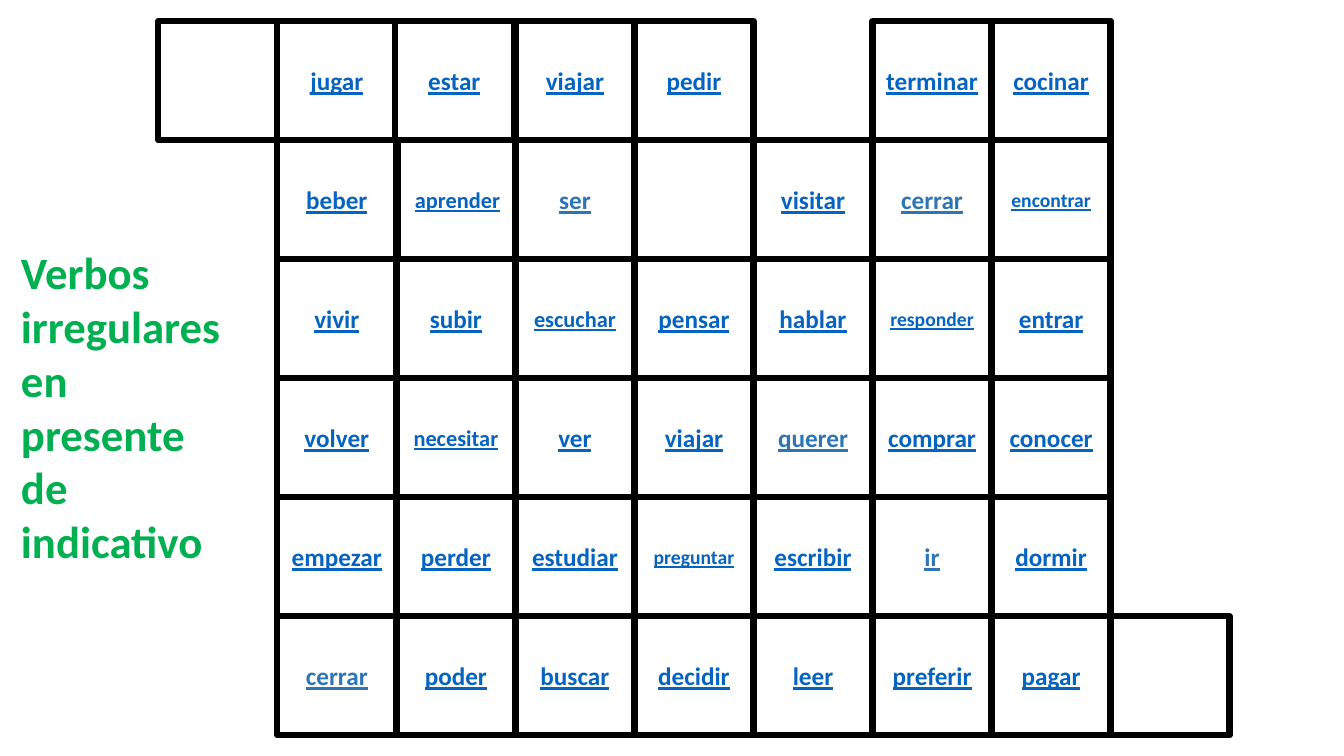
from pptx import Presentation
from pptx.dml.color import RGBColor
from pptx.enum.shapes import MSO_SHAPE
from pptx.enum.text import MSO_ANCHOR, MSO_AUTO_SIZE, PP_ALIGN
from pptx.util import Cm, Pt


def rgb(value):
    return RGBColor.from_string(value)


def style(p, size, color, underline=None):
    for r in p.runs:
        r.font.name = "Calibri"
        r.font.size = Pt(size)
        r.font.bold = True
        r.font.underline = underline
        r.font.color.rgb = rgb(color)


prs = Presentation()
prs.slide_width, prs.slide_height = Cm(33.87), Cm(19.05)
s = prs.slides.add_slide(prs.slide_layouts[6])

# Board: None leaves a gap, "" is an empty square
CELL, LEFT, TOP = 3, 3.99, 0.53
board = [
    ["", "jugar", "estar", "viajar", "pedir", None, "terminar", "cocinar", None],
    [None, "beber", "aprender", "ser", None, "visitar", "cerrar", "encontrar", None],
    [None, "vivir", "subir", "escuchar", "pensar", "hablar", "responder", "entrar", None],
    [None, "volver", "necesitar", "ver", "viajar", "querer", "comprar", "conocer", None],
    [None, "empezar", "perder", "estudiar", "preguntar", "escribir", "ir", "dormir", None],
    [None, "cerrar", "poder", "buscar", "decidir", "leer", "preferir", "pagar", ""],
]
sizes = {"aprender": 16, "escuchar": 16, "necesitar": 16,
         "encontrar": 14, "responder": 14, "preguntar": 14}
lighter = {"ser", "cerrar", "querer", "ir"}
nudges = {"estar": -0.04, "aprender": 0.04}

for row, verbs in enumerate(board):
    for col, verb in enumerate(verbs):
        if verb is None:
            continue
        x = LEFT + col * CELL + nudges.get(verb, 0)
        sp = s.shapes.add_shape(MSO_SHAPE.RECTANGLE, Cm(x), Cm(TOP + row * CELL),
                                Cm(CELL), Cm(CELL))
        sp.shadow.inherit = False
        sp.fill.solid()
        sp.fill.fore_color.rgb = rgb("FFFFFF")
        sp.line.color.rgb = rgb("000000")
        sp.line.width = Pt(4.5)
        if verb:
            tf = sp.text_frame
            tf.text = verb
            tf.vertical_anchor = MSO_ANCHOR.MIDDLE
            p = tf.paragraphs[0]
            p.alignment = PP_ALIGN.CENTER
            style(p, sizes.get(verb, 18), "2E75B6" if verb in lighter else "0563C1", True)

# Title
title = s.shapes.add_textbox(Cm(0.28), Cm(6.05), Cm(5.84), Cm(8.46))
tf = title.text_frame
tf.word_wrap = True
tf.auto_size = MSO_AUTO_SIZE.SHAPE_TO_FIT_TEXT
tf.text = "Verbos irregulares\nen presente\nde indicativo"
for p in tf.paragraphs:
    style(p, 32, "00B050")

prs.save("out.pptx")
